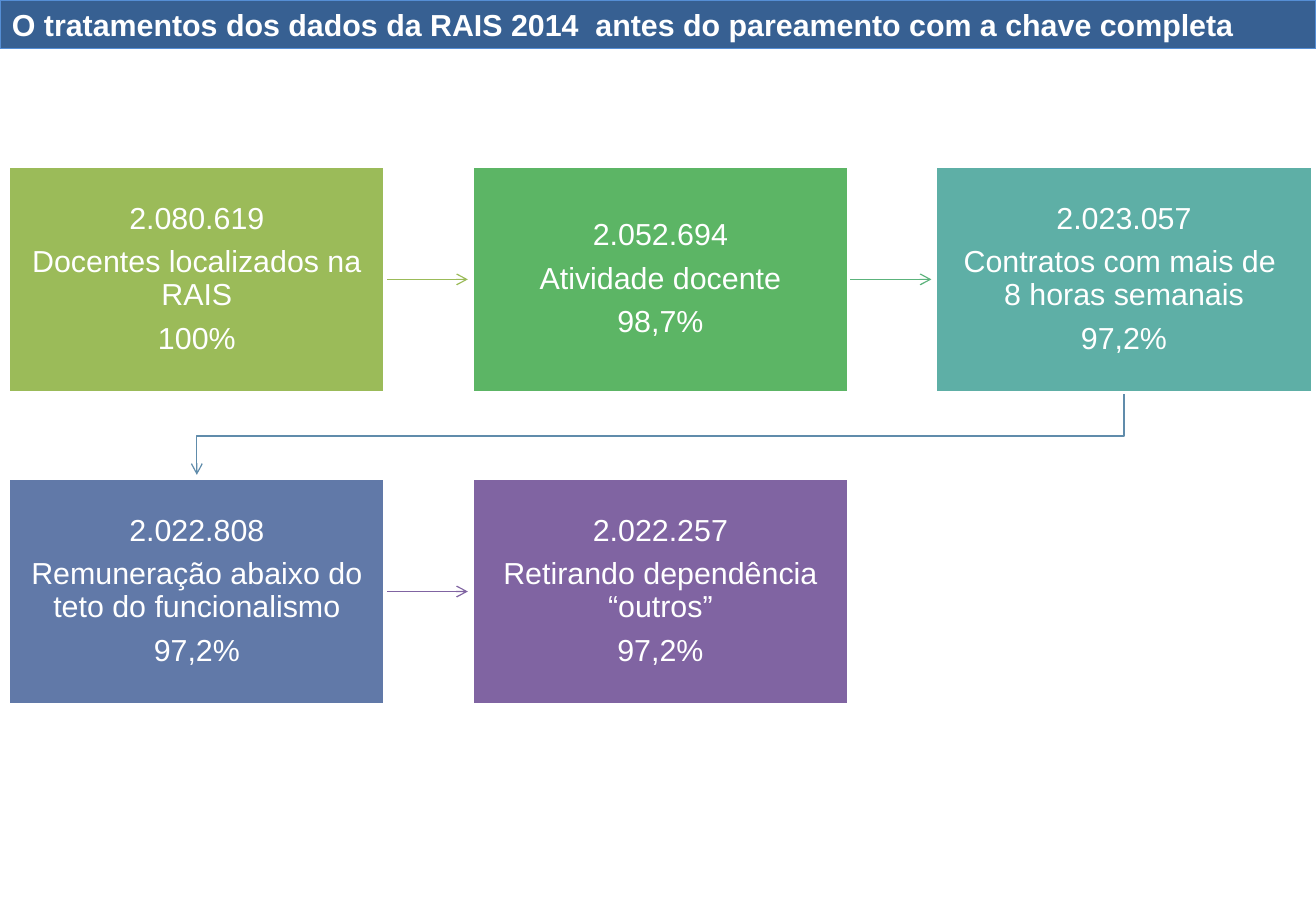
import pptx
import pptx.util
import pptx.dml.color
import pptx.enum.shapes
import pptx.enum.text
import pptx.oxml.ns
from lxml import etree

Inches = pptx.util.Inches
Pt = pptx.util.Pt
MSO_SHAPE = pptx.enum.shapes.MSO_SHAPE
MSO_CONNECTOR = pptx.enum.shapes.MSO_CONNECTOR
MSO_ANCHOR = pptx.enum.text.MSO_ANCHOR
PP_ALIGN = pptx.enum.text.PP_ALIGN
qn = pptx.oxml.ns.qn

SLIDE_W, SLIDE_H = 10.83, 7.5
BOX_W, BOX_H = 3.1, 1.86
LEFT, TOP = 0.07, 1.37
COL_STEP, ROW_STEP = 7.63 / 2, 2.57
ARROW_LEN = 0.68

# column, row, fill, colour of the arrow leaving the box, lines of text
STEPS = [
    (0, 0, "9BBB59", "9BBB59",
     ["2.080.619", "Docentes localizados na RAIS", "100%"]),
    (1, 0, "5CB565", "5CB37C",
     ["2.052.694", "Atividade docente", "98,7%"]),
    (2, 0, "5EAFA6", "608CAB",
     ["2.023.057", "Contratos com mais de  8 horas semanais", "97,2%"]),
    (0, 1, "6179A8", "8064A2",
     ["2.022.808", "Remuneração abaixo do teto do funcionalismo", "97,2%"]),
    (1, 1, "8064A2", None,
     ["2.022.257", "Retirando dependência “outros”", "97,2%"]),
]


def rgb(value):
    return pptx.dml.color.RGBColor.from_string(value)


def apply(target, values):
    for name, value in values.items():
        setattr(target, name, value)


class FlowSlide:
    font = {"name": "Arial", "size": Pt(18)}
    box_frame = {"word_wrap": True, "vertical_anchor": MSO_ANCHOR.MIDDLE,
                 "margin_left": Inches(0.14), "margin_right": Inches(0.14),
                 "margin_top": Inches(0.14), "margin_bottom": Inches(0.14)}
    box_paragraph = {"alignment": PP_ALIGN.CENTER, "line_spacing": 0.9,
                     "space_after": Pt(6.3)}
    title_frame = {"word_wrap": True, "vertical_anchor": MSO_ANCHOR.TOP}
    title_paragraph = {"alignment": PP_ALIGN.LEFT}

    def __init__(self, prs):
        self.s = prs.slides.add_slide(prs.slide_layouts[6])

    def line(self, sp, color, width):
        sp.line.color.rgb = rgb(color)
        sp.line.width = Pt(width)

    def arrowhead(self, sp):
        etree.SubElement(sp.line._get_or_add_ln(), qn("a:tailEnd"), type="arrow")

    def rect(self, x, y, w, h, fill, outline, lines, frame, paragraph, bold=False):
        sp = self.s.shapes.add_shape(MSO_SHAPE.RECTANGLE, Inches(x), Inches(y),
                                     Inches(w), Inches(h))
        sp.shadow.inherit = False
        sp.fill.solid()
        sp.fill.fore_color.rgb = rgb(fill)
        self.line(sp, *outline)
        tf = sp.text_frame
        apply(tf, frame)
        for i, text in enumerate(lines):
            p = tf.add_paragraph() if i else tf.paragraphs[0]
            apply(p, paragraph)
            r = p.add_run()
            r.text = text
            apply(r.font, {**self.font, "bold": bold})
            r.font.color.rgb = rgb("FFFFFF")
        return sp

    def title(self, text):
        self.rect(0, 0, SLIDE_W, 0.4, "376092", ("558ED5", 0.75), [text],
                  self.title_frame, self.title_paragraph, bold=True)

    def box(self, x, y, fill, lines):
        return self.rect(x, y, BOX_W, BOX_H, fill, ("FFFFFF", 2), lines,
                         self.box_frame, self.box_paragraph)

    def arrow(self, x, y, color):
        sp = self.s.shapes.add_connector(MSO_CONNECTOR.STRAIGHT, Inches(x), Inches(y),
                                         Inches(x + ARROW_LEN), Inches(y))
        self.line(sp, color, 0.75)
        self.arrowhead(sp)
        etree.SubElement(sp._element.spPr, qn("a:effectLst"))
        return sp

    def bent_arrow(self, points, color):
        start, *rest = [(Inches(x), Inches(y)) for x, y in points]
        builder = self.s.shapes.build_freeform(*start)
        builder.add_line_segments(rest, close=False)
        sp = builder.convert_to_shape()
        sp.shadow.inherit = False
        sp.fill.background()
        self.line(sp, color, 0.75)
        self.arrowhead(sp)

    def step(self, col, row, fill, arrow_color, lines):
        """Draw a box over the start of the arrow that leaves it."""
        x, y = LEFT + col * COL_STEP, TOP + row * ROW_STEP
        arrow = None
        if arrow_color and col < 2:
            arrow = self.arrow(x + BOX_W, y + BOX_H / 2, arrow_color)
        elif arrow_color:
            start_x, end_x = x + BOX_W / 2, LEFT + BOX_W / 2
            bottom = y + BOX_H
            bend = bottom + 0.36
            self.bent_arrow([(start_x, bottom), (start_x, bend), (end_x, bend),
                             (end_x, bottom + ARROW_LEN)], arrow_color)
        box = self.box(x, y, fill, lines)
        if arrow:
            arrow.begin_connect(box, 3)


def main():
    prs = pptx.Presentation()
    apply(prs, {"slide_width": Inches(SLIDE_W), "slide_height": Inches(SLIDE_H)})
    flow = FlowSlide(prs)
    flow.title("O tratamentos dos dados da RAIS 2014  antes do pareamento "
               "com a chave completa")
    for step in STEPS:
        flow.step(*step)
    prs.save("out.pptx")


if __name__ == "__main__":
    main()
